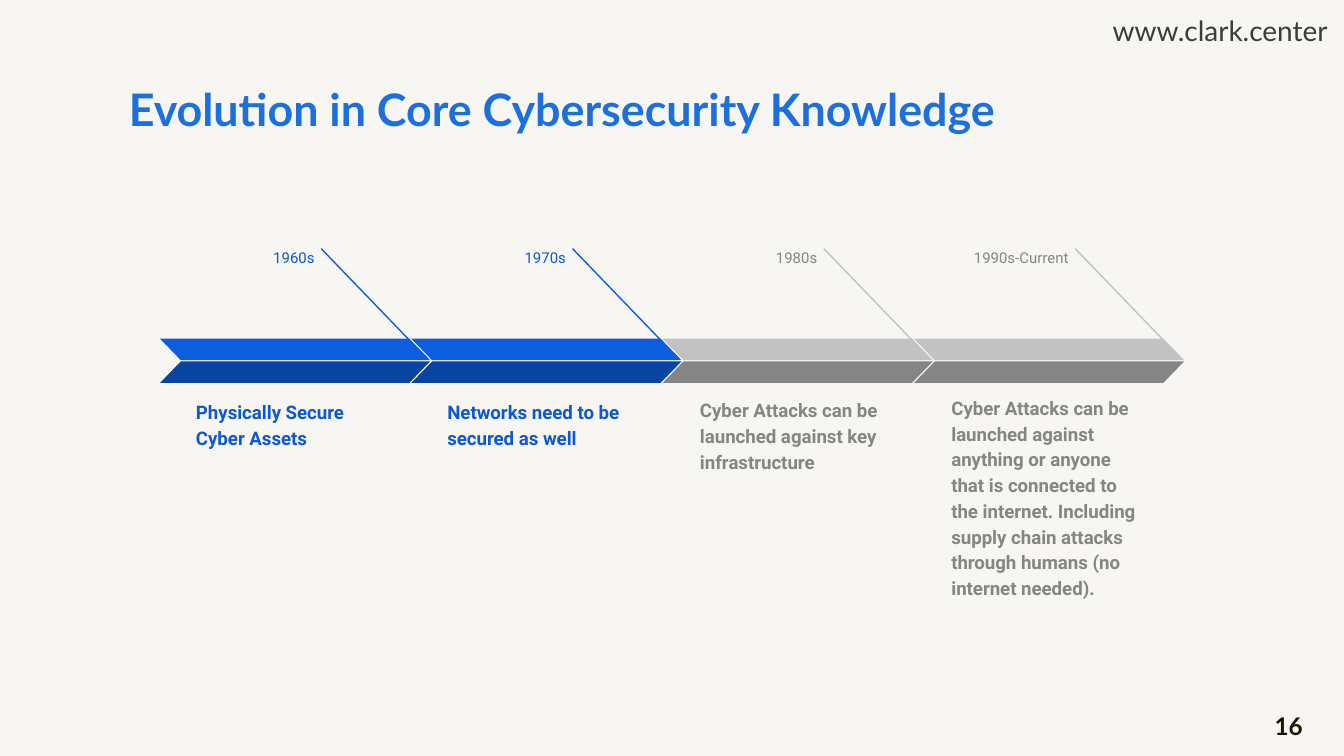
from typing import NamedTuple

from lxml import etree
from pptx import Presentation
from pptx.dml.color import RGBColor
from pptx.enum.shapes import MSO_CONNECTOR, MSO_SHAPE
from pptx.enum.text import MSO_ANCHOR, PP_ALIGN
from pptx.oxml.ns import qn
from pptx.slide import Slide
from pptx.util import Inches, Pt

PARALLELOGRAM = MSO_SHAPE.PARALLELOGRAM
STRAIGHT = MSO_CONNECTOR.STRAIGHT
TOP, BOTTOM = MSO_ANCHOR.TOP, MSO_ANCHOR.BOTTOM
LEFT, RIGHT = PP_ALIGN.LEFT, PP_ALIGN.RIGHT

BACKGROUND = RGBColor(0xF8, 0xF6, 0xF3)
TITLE_BLUE = RGBColor(0x1C, 0x70, 0xDD)
TEXT_BLUE = RGBColor(0x0C, 0x58, 0xD3)
BRIGHT_BLUE = RGBColor(0x0D, 0x5D, 0xDF)
DARK_BLUE = RGBColor(0x09, 0x44, 0xA1)
LIGHT_GRAY = RGBColor(0xC2, 0xC2, 0xC2)
DARK_GRAY = RGBColor(0x85, 0x85, 0x85)
ADDRESS_GRAY = RGBColor(0x3C, 0x3C, 0x3C)
NUMBER_BLACK = RGBColor(0x15, 0x15, 0x00)

FIRST_STAGE_LEFT = 1.19
STAGE_PITCH = 1.87
BAND_WIDTH, BAND_HEIGHT = 2.01, 0.16
UPPER_BAND_TOP, LOWER_BAND_TOP = 2.52, 2.69


class Palette(NamedTuple):
    text: RGBColor
    upper: RGBColor
    lower: RGBColor


class Stage(NamedTuple):
    period: str
    period_width: float
    summary: str
    summary_indent: float
    summary_top: float
    palette: Palette


BLUE = Palette(TEXT_BLUE, BRIGHT_BLUE, DARK_BLUE)
GRAY = Palette(DARK_GRAY, LIGHT_GRAY, DARK_GRAY)

STAGES = [
    Stage("1960s", 0.68, "Physically Secure Cyber Assets", 0.17, 2.95, BLUE),
    Stage("1970s", 0.68, "Networks need to be secured as well", 0.17, 2.95, BLUE),
    Stage("1980s", 0.68,
          "Cyber Attacks can be launched against key infrastructure",
          0.18, 3.13, GRAY),
    Stage("1990s-Current", 1.09,
          "Cyber Attacks can be launched against anything or anyone that is "
          "connected to the internet. Including supply chain attacks through "
          "humans (no internet needed).", 0.18, 4.07, GRAY),
]


def add_text(page: Slide, text: str, left: float, top: float, width: float,
             height: float, *, size: float, color: RGBColor, font: str = "Lato",
             bold: bool = False, align: PP_ALIGN = LEFT,
             anchor: MSO_ANCHOR = TOP, line_spacing: float = 1.0,
             space_after: float = 0, wrap: bool = True) -> None:
    box = page.shapes.add_textbox(Inches(left), Inches(top),
                                  Inches(width), Inches(height))
    frame = box.text_frame
    frame.word_wrap = wrap
    frame.vertical_anchor = anchor
    frame.margin_left = frame.margin_right = Inches(0.1)
    frame.margin_top = frame.margin_bottom = Inches(0.1)
    para = frame.paragraphs[0]
    para.alignment = align
    para.line_spacing = line_spacing
    para.space_after = Pt(space_after)
    span = para.add_run()
    span.text = text
    span.font.name = font
    span.font.size = Pt(size)
    span.font.bold = bold
    span.font.color.rgb = color


def add_band(page: Slide, left: float, top: float, color: RGBColor,
             flipped: bool = False) -> None:
    """Draw one slanted half of a stage's arrow."""
    band = page.shapes.add_shape(PARALLELOGRAM, Inches(left), Inches(top),
                                 Inches(BAND_WIDTH), Inches(BAND_HEIGHT))
    band.adjustments[0] = 0.97
    band.shadow.inherit = False
    band.fill.solid()
    band.fill.fore_color.rgb = color
    band.line.fill.background()
    if flipped:
        band._element.spPr.xfrm.set("flipH", "1")


def add_leader(page: Slide, left: float, color: RGBColor) -> None:
    """Draw the slanted line from a period label to the arrow."""
    leader = page.shapes.add_connector(STRAIGHT, Inches(left), Inches(1.85),
                                       Inches(left + 0.79), Inches(2.67))
    leader.line.color.rgb = color
    leader.line.width = Pt(0.75)
    etree.SubElement(leader._element.spPr, qn("a:effectLst"))


def add_stage(page: Slide, stage: Stage, left: float) -> None:
    palette = stage.palette
    period_right = left + 1.25
    add_text(page, stage.period, period_right - stage.period_width, 1.75,
             stage.period_width, 0.26, size=8, color=palette.text,
             font="Roboto", align=RIGHT, line_spacing=1.15, space_after=16)
    add_text(page, stage.summary, left + stage.summary_indent,
             stage.summary_top, 1.65, 0.49, size=10, color=palette.text,
             font="Roboto", bold=True, anchor=BOTTOM, line_spacing=1.15)
    add_leader(page, left + 1.2, palette.upper)
    add_band(page, left, UPPER_BAND_TOP, palette.upper, flipped=True)
    add_band(page, left, LOWER_BAND_TOP, palette.lower)


def main() -> None:
    deck = Presentation()
    deck.slide_width = Inches(10)
    deck.slide_height = deck.slide_width * 9 // 16
    page = deck.slides.add_slide(deck.slide_layouts[6])
    page.background.fill.solid()
    page.background.fill.fore_color.rgb = BACKGROUND

    add_text(page, "Evolution in Core Cybersecurity Knowledge", 0.86, 0.34,
             8.28, 0.77, size=24, color=TITLE_BLUE, bold=True, anchor=BOTTOM)
    add_text(page, "16", 9.19, 5.19, 0.6, 0.43, size=13, color=NUMBER_BLACK,
             bold=True, align=RIGHT)
    for index, stage in enumerate(STAGES):
        add_stage(page, stage, FIRST_STAGE_LEFT + index * STAGE_PITCH)
    add_text(page, "www.clark.center", 8.18, 0, 1.82, 0.45, size=15,
             color=ADDRESS_GRAY, wrap=False)

    deck.save("out.pptx")


if __name__ == "__main__":
    main()
